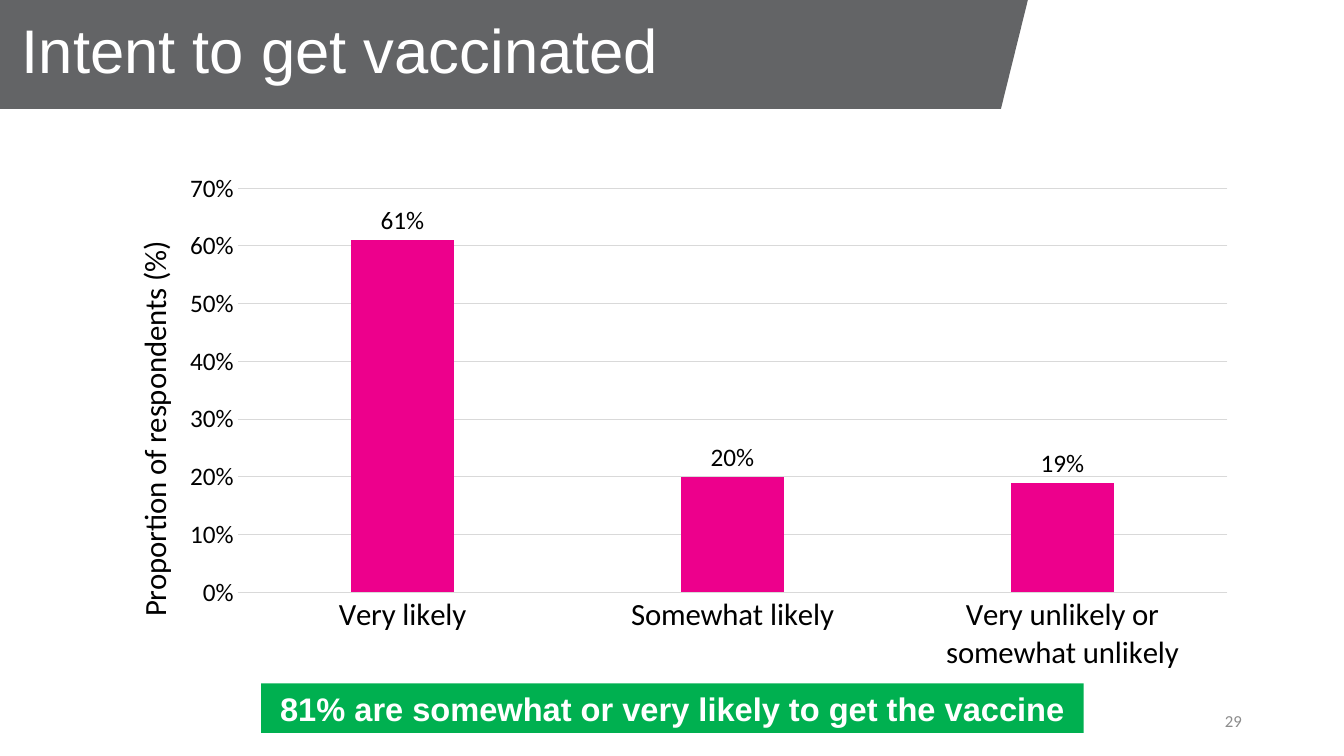
import pptx
import pptx.chart.data
import pptx.dml.color
import pptx.enum.chart
import pptx.enum.shapes
import pptx.enum.text
import pptx.oxml
import pptx.oxml.ns
import pptx.util

Pt = pptx.util.Pt
ALIGN = pptx.enum.text.PP_ALIGN
ANCHOR = pptx.enum.text.MSO_ANCHOR
SHAPES = pptx.enum.shapes.MSO_SHAPE
CHART = pptx.enum.chart

BLACK, WHITE, GREY, GRID = "000000", "FFFFFF", "8C8C8C", "D9D9D9"
BANNER, BAR, CALLOUT = "636466", "ED008C", "00B050"


def colour(code):
    return pptx.dml.color.RGBColor.from_string(code)


def set_all(target, values):
    for name, value in values.items():
        setattr(target, name, value)


def set_font(font, name, size, code, bold=False):
    set_all(font, {"name": name, "size": Pt(size), "bold": bold})
    font.color.rgb = colour(code)


def write_text(shape, text, font, align=ALIGN.LEFT, anchor=ANCHOR.TOP, spacing=1.0):
    set_all(shape.text_frame, {"word_wrap": True, "vertical_anchor": anchor})
    para = shape.text_frame.paragraphs[0]
    set_all(para, {"alignment": align, "line_spacing": spacing})
    span = para.add_run()
    span.text = text
    set_font(span.font, *font)


def add_block(page, kind, box, fill):
    block = page.shapes.add_shape(kind, *map(Pt, box))
    block.shadow.inherit = False
    block.fill.solid()
    block.fill.fore_color.rgb = colour(fill)
    block.line.fill.background()
    return block


def place_in_chart(parent, index, target, **fractions):
    """Fix a chart part at fractions of the chart's own size."""
    for old in parent.findall(pptx.oxml.ns.qn("c:layout")):
        parent.remove(old)
    inner = f'<c:layoutTarget val="{target}"/>' if target else ""
    modes = "".join(f'<c:{axis}Mode val="edge"/>' for axis in "xy")
    values = "".join(f'<c:{key} val="{value}"/>' for key, value in fractions.items())
    parent.insert(index, pptx.oxml.parse_xml(
        f'<c:layout {pptx.oxml.ns.nsdecls("c")}><c:manualLayout>'
        f"{inner}{modes}{values}</c:manualLayout></c:layout>"))


def add_header(page, left, top, width, height):
    # Slanted banner, its left point beyond the slide edge
    slant = 19.4
    banner = add_block(page, SHAPES.PARALLELOGRAM,
                       (left - slant, top, width + slant, height), BANNER)
    banner.adjustments[0] = slant / height
    # Title
    title = page.shapes.add_textbox(Pt(left + 8.6), Pt(top + 11.5), Pt(828), Pt(104.4))
    write_text(title, "Intent to get vaccinated", ("Arial", 44, WHITE), spacing=0.9)


def add_intent_chart(page, left, top, width, height):
    data = pptx.chart.data.CategoryChartData(number_format="0%")
    data.categories = ["Very likely", "Somewhat likely", "Very unlikely or somewhat unlikely"]
    data.add_series("Series 1", (0.61, 0.2, 0.19))
    chart = page.shapes.add_chart(CHART.XL_CHART_TYPE.COLUMN_CLUSTERED,
                                  Pt(left), Pt(top), Pt(width), Pt(height), data).chart
    set_all(chart, {"has_title": False, "has_legend": False})
    set_font(chart.font, "Calibri", 10, BLACK)

    # Bars and their labels
    plot = chart.plots[0]
    set_all(plot, {"gap_width": 219, "overlap": -27, "vary_by_categories": False,
                   "has_data_labels": True})
    bars = plot.series[0].format.fill
    bars.solid()
    bars.fore_color.rgb = colour(BAR)
    labels = plot.data_labels
    set_all(labels, {"show_value": True, "number_format": "0%",
                     "number_format_is_linked": False,
                     "position": CHART.XL_LABEL_POSITION.OUTSIDE_END})
    set_font(labels.font, "Calibri", 18, BLACK)

    # Axes
    categories, values = chart.category_axis, chart.value_axis
    for axis, size in ((categories, 22), (values, 18)):
        set_all(axis, {"major_tick_mark": CHART.XL_TICK_MARK.NONE,
                       "minor_tick_mark": CHART.XL_TICK_MARK.NONE})
        set_font(axis.tick_labels.font, "Calibri", size, BLACK)
    set_all(values, {"minimum_scale": 0, "maximum_scale": 0.7, "major_unit": 0.1,
                     "has_major_gridlines": True, "has_title": True})
    set_all(values.tick_labels, {"number_format": "0%", "number_format_is_linked": False})
    values.format.line.fill.background()
    for line in (categories.format.line, values.major_gridlines.format.line):
        line.width = Pt(0.75)
        line.color.rgb = colour(GRID)

    # Value axis title, reading upwards
    frame = values.axis_title.text_frame
    span = frame.paragraphs[0].add_run()
    span.text = "Proportion of respondents (%)"
    set_font(span.font, "Calibri", 22, BLACK)
    title = values.axis_title.format.element if hasattr(
        values.axis_title.format, "element") else values.axis_title.element
    body = title.find(".//" + pptx.oxml.ns.qn("a:bodyPr"))
    body.set("rot", "-5400000")
    body.set("vert", "horz")
    place_in_chart(title, 1, None, x=0.03, y=0.14)
    plot_area = chart.element.find(".//" + pptx.oxml.ns.qn("c:plotArea"))
    place_in_chart(plot_area, 0, "inner", x=0.125, y=0.048, w=0.854, h=0.777)


def add_callout(page, *box):
    callout = add_block(page, SHAPES.RECTANGLE, box, CALLOUT)
    write_text(callout, "81% are somewhat or very likely to get the vaccine",
               ("Arial", 23.3, WHITE, True), ALIGN.CENTER, ANCHOR.MIDDLE)


def add_page_number(page, *box):
    number = page.shapes.add_textbox(*map(Pt, box))
    write_text(number, "29", ("Calibri", 12, GREY), ALIGN.RIGHT, ANCHOR.MIDDLE)


def main():
    deck = pptx.Presentation()
    set_all(deck, {"slide_width": Pt(960), "slide_height": Pt(540)})
    page = deck.slides.add_slide(deck.slide_layouts[6])
    add_header(page, 0, -0.7, 734.4, 78.5)
    add_page_number(page, 678.2, 500.4, 216, 28.8)
    add_intent_chart(page, 66.2, 116.6, 828, 371.5)
    add_callout(page, 186.5, 488.2, 587.5, 35.3)
    deck.save("out.pptx")


if __name__ == "__main__":
    main()
